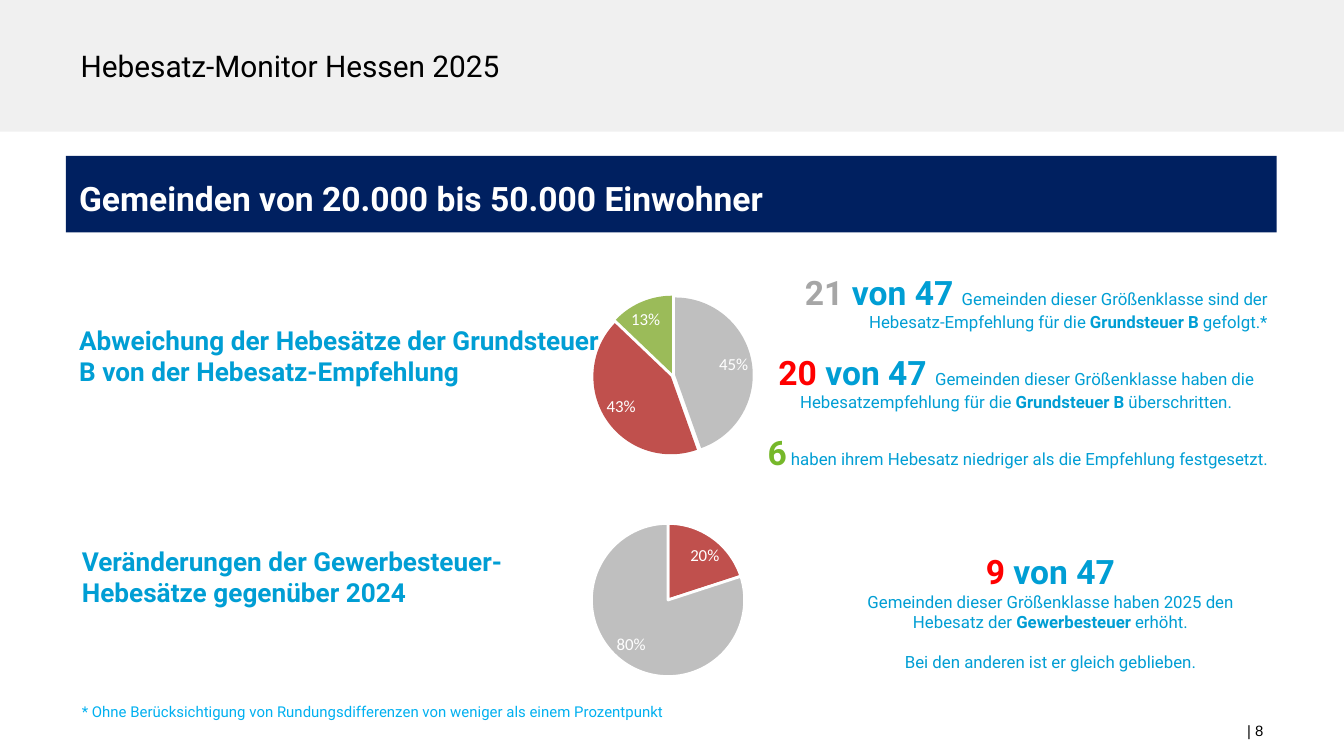
from dataclasses import dataclass

from lxml import etree
from pptx import Presentation
from pptx.chart.data import CategoryChartData
from pptx.dml.color import RGBColor
from pptx.enum import chart as ch, shapes, text
from pptx.util import Inches, Pt

COLORS = {
    "band": "F0F0F0", "navy": "002060", "white": "FFFFFF", "black": "000000",
    "blue": "009ED4", "note": "00B0F0", "gray": "A6A6A6", "red": "FF0000",
    "green": "76B82A", "pie_gray": "BFBFBF", "pie_red": "C0504D",
    "pie_green": "9BBB59", "pie_lime": "92D050",
}
LEFT, CENTER, RIGHT = text.PP_ALIGN.LEFT, text.PP_ALIGN.CENTER, text.PP_ALIGN.RIGHT
TOP, MIDDLE, BOTTOM = text.MSO_ANCHOR.TOP, text.MSO_ANCHOR.MIDDLE, text.MSO_ANCHOR.BOTTOM
Box = tuple[float, float, float, float]


@dataclass
class Run:
    text: str
    size: float = 9
    color: str = "blue"
    bold: bool = False
    font: str = "Roboto"


@dataclass
class Para:
    runs: list[Run]
    align: text.PP_ALIGN = LEFT
    before: float = 0


@dataclass
class TextBlock:
    box: Box
    paras: list[Para]
    anchor: text.MSO_ANCHOR = TOP
    insets: tuple[float, float] = (0.1, 0.05)


@dataclass
class Pie:
    box: Box
    values: tuple[int | None, ...]
    colors: tuple[str, ...]
    plot: Box
    explosion: int = 0


def rgb(name: str) -> RGBColor:
    return RGBColor.from_string(COLORS[name])


def place(s, box: Box) -> None:
    s.left, s.top, s.width, s.height = map(Inches, box)


def fill_text(tf, block: TextBlock) -> None:
    tf.word_wrap = True
    tf.auto_size = text.MSO_AUTO_SIZE.NONE
    tf.vertical_anchor = block.anchor
    tf.margin_left = tf.margin_right = Inches(block.insets[0])
    tf.margin_top = tf.margin_bottom = Inches(block.insets[1])
    for i, para in enumerate(block.paras):
        p = tf.add_paragraph() if i else tf.paragraphs[0]
        p.alignment = para.align
        if para.before:
            p.space_before = Pt(para.before)
        for run in para.runs:
            r = p.add_run()
            r.text = run.text
            r.font.name = run.font
            r.font.size = Pt(run.size)
            r.font.bold = run.bold
            r.font.color.rgb = rgb(run.color)


def add_text(slide, block: TextBlock) -> None:
    s = slide.shapes.add_textbox(*map(Inches, block.box))
    fill_text(s.text_frame, block)


def add_rect(slide, box: Box, color: str):
    s = slide.shapes.add_shape(shapes.MSO_SHAPE.RECTANGLE, *map(Inches, box))
    s.shadow.inherit = False
    s.fill.solid()
    s.fill.fore_color.rgb = rgb(color)
    s.line.fill.background()
    return s


def set_plot_layout(chart, plot: Box) -> None:
    """Fix the inner plot area, given as fractions of the chart."""
    area = chart.element.chart.plotArea
    ns = area.nsmap["c"]
    for old in area.findall(f"{{{ns}}}layout"):
        area.remove(old)
    layout = etree.Element(f"{{{ns}}}layout")
    manual = etree.SubElement(layout, f"{{{ns}}}manualLayout")
    settings = [("layoutTarget", "inner"), ("xMode", "edge"), ("yMode", "edge")]
    settings += zip("xywh", plot)
    for tag, value in settings:
        etree.SubElement(manual, f"{{{ns}}}{tag}").set("val", str(value))
    area.insert(0, layout)


def add_pie(slide, pie: Pie) -> None:
    data = CategoryChartData()
    data.categories = ["1", "2", "3"]
    data.add_series("Series 1", pie.values)
    frame = slide.shapes.add_chart(ch.XL_CHART_TYPE.PIE, *map(Inches, pie.box), data)
    chart = frame.chart
    chart.has_title = chart.has_legend = False
    chart.font.name = "Calibri"
    chart.font.size = Pt(10)
    chart.font.color.rgb = rgb("black")
    set_plot_layout(chart, pie.plot)

    plot = chart.plots[0]
    plot.vary_by_categories = True
    series = plot.series[0]
    for i, color in enumerate(pie.colors):
        fmt = series.points[i].format
        fmt.fill.solid()
        fmt.fill.fore_color.rgb = rgb(color)
        if pie.explosion:
            fmt.line.fill.background()
        else:
            fmt.line.color.rgb = rgb("white")
            fmt.line.width = Pt(1.5)
    if pie.explosion:
        ser = series._element
        ns = ser.nsmap["c"]
        explosion = etree.Element(f"{{{ns}}}explosion", val=str(pie.explosion))
        ser.find(f"{{{ns}}}dPt").addprevious(explosion)

    plot.has_data_labels = True
    labels = plot.data_labels
    labels.show_percentage = True
    labels.show_value = False
    labels.number_format = "0%;;"  # hides a zero share
    labels.number_format_is_linked = False
    labels.position = ch.XL_LABEL_POSITION.BEST_FIT
    labels.font.name = "Calibri"
    labels.font.size = Pt(9)
    labels.font.color.rgb = rgb("white")


def big(value: str, color: str = "blue") -> Run:
    return Run(value, 18, color, True)


def heading(box: Box, value: str, anchor: text.MSO_ANCHOR = TOP) -> TextBlock:
    return TextBlock(box, [Para([Run(value, 14, bold=True)])], anchor)


GAP = 10.5
TITLE = TextBlock((0.5, 0.17, 7.66, 0.64),
                  [Para([Run("Hebesatz-Monitor Hessen 2025", 16, "black")])], MIDDLE)
BANNER = TextBlock((0.49, 1.16, 9.01, 0.57),
                   [Para([Run("Gemeinden von 20.000 bis 50.000 Einwohner", 18, "white", True)])],
                   MIDDLE)
BLOCKS = [
    TextBlock((6.36, 5.25, 3.14, 0.3),
              [Para([Run("| 8", 8, "black", font="Arial")], RIGHT)], BOTTOM),
    TextBlock((5.62, 1.98, 3.88, 1.71), [
        Para([big("21 ", "gray"), big("von 47 "),
              Run("Gemeinden dieser Größenklasse sind der Hebesatz-Empfehlung für die "),
              Run("Grundsteuer B ", bold=True), Run("gefolgt.*")], RIGHT),
        Para([big("20", "red"), big(" von 47 "),
              Run("Gemeinden dieser Größenklasse haben die Hebesatzempfehlung für die "),
              Run("Grundsteuer B", bold=True), Run(" überschritten.")], CENTER, GAP),
        Para([big("6", "green"),
              Run(" haben ihrem Hebesatz niedriger als die Empfehlung festgesetzt.")],
             RIGHT, GAP),
    ], insets=(0.07, 0.04)),
    TextBlock((6.16, 4.05, 3.31, 1.01), [
        Para([big("9", "red"), big(" von 47")], CENTER),
        Para([Run("Gemeinden dieser Größenklasse haben 2025 den Hebesatz der "),
              Run("Gewerbesteuer", bold=True), Run(" erhöht.")], CENTER),
        Para([Run("Bei den anderen ist er gleich geblieben.")], CENTER, GAP),
    ]),
    heading((0.49, 2.24, 4.1, 0.81),
            "Abweichung der Hebesätze der Grundsteuer B von der Hebesatz-Empfehlung", MIDDLE),
    heading((0.51, 4.01, 3.92, 0.57),
            "Veränderungen der Gewerbesteuer-Hebesätze gegenüber 2024"),
    TextBlock((0.51, 5.18, 5.09, 0.24), [Para([Run(
        "* Ohne Berücksichtigung von Rundungsdifferenzen von weniger als einem Prozentpunkt",
        8, "note")])]),
]
PIES = [
    Pie((4.08, 1.89, 1.8, 1.63), (45, 43, 13, None), ("pie_gray", "pie_red", "pie_green"),
        (0.18, 0.19, 0.67, 0.73), explosion=3),
    Pie((4.08, 3.65, 1.8, 1.63), (20, 0, 80, None), ("pie_red", "pie_lime", "pie_gray"),
        (0.16, 0.15, 0.67, 0.7)),
]


def main() -> None:
    prs = Presentation()
    prs.slide_width = Inches(10)
    prs.slide_height = prs.slide_width * 9 // 16
    slide = prs.slides.add_slide(prs.slide_layouts[5])
    title = slide.shapes.title
    place(title, TITLE.box)
    fill_text(title.text_frame, TITLE)
    band = add_rect(slide, (0, 0, 10, 0.98), "band")
    title.element.addprevious(band.element)

    banner = add_rect(slide, BANNER.box, "navy")
    fill_text(banner.text_frame, BANNER)
    banner.text_frame.paragraphs[0].line_spacing = 1.2
    for block in BLOCKS:
        add_text(slide, block)
    for pie in PIES:
        add_pie(slide, pie)
    prs.save("out.pptx")


if __name__ == "__main__":
    main()
